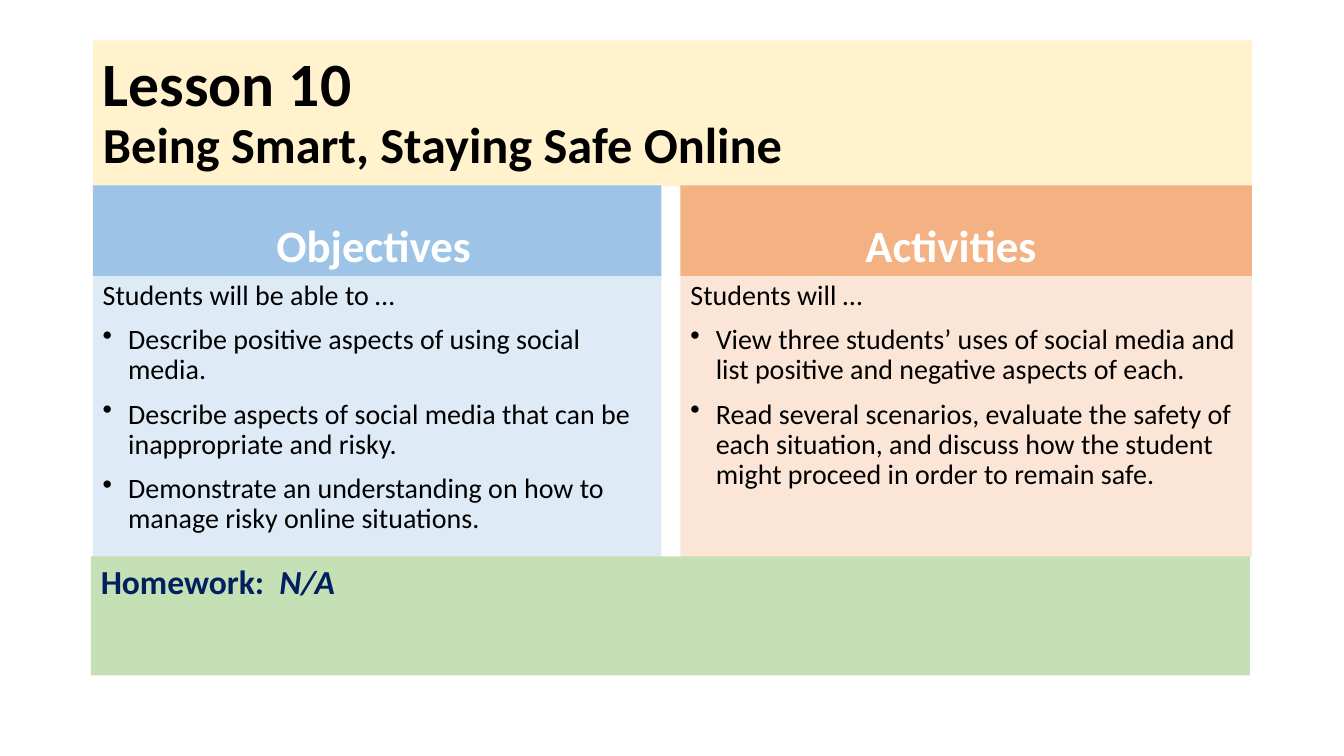
import pptx
import pptx.util
import pptx.dml.color
import pptx.enum.shapes
import pptx.enum.text
import pptx.oxml
import pptx.oxml.ns

Cm = pptx.util.Cm
Pt = pptx.util.Pt
ALIGN = pptx.enum.text.PP_ALIGN
ANCHOR = pptx.enum.text.MSO_ANCHOR

HUES = {
    "cream": "FFF2CC",
    "blue": "9DC3E6",
    "sky": "DEEBF7",
    "orange": "F4B183",
    "peach": "FBE5D6",
    "green": "C5E0B4",
    "navy": "002060",
    "black": "000000",
    "white": "FFFFFF",
}


def shade(fill, hue):
    fill.solid()
    fill.fore_color.rgb = pptx.dml.color.RGBColor.from_string(HUES[hue])


def style(run, size, hue, bold=False):
    run.font.name = "Calibri"
    run.font.size = Pt(size)
    run.font.bold = bold
    shade(run.font.fill, hue)


def place(shape, box):
    shape.left, shape.top, shape.width, shape.height = [Cm(n) for n in box]


def panel(slide, box, hue, anchor):
    kind = pptx.enum.shapes.MSO_SHAPE.RECTANGLE
    shape = slide.shapes.add_shape(kind, *[Cm(n) for n in box])
    shape.shadow.inherit = False
    shade(shape.fill, hue)
    shape.line.fill.background()
    frame = shape.text_frame
    frame.word_wrap = True
    frame.vertical_anchor = anchor
    return frame


def bullet(para):
    props = para._p.get_or_add_pPr()
    props.set("marL", str(Cm(0.64)))
    props.set("indent", str(-Cm(0.64)))
    mark = pptx.oxml.parse_xml(
        f'<a:buChar {pptx.oxml.ns.nsdecls("a")} char="•"/>')
    props.append(mark)


def banner(slide, box, lesson, topic):
    title = slide.shapes.title
    place(title, box)
    shade(title.fill, "cream")
    frame = title.text_frame
    frame.auto_size = pptx.enum.text.MSO_AUTO_SIZE.NONE
    frame.vertical_anchor = ANCHOR.MIDDLE
    para = frame.paragraphs[0]
    para.text = f"{lesson}\v{topic}"
    para.alignment = ALIGN.LEFT
    para.line_spacing = 0.9
    for run, size in zip(para.runs, (44, 36)):
        style(run, size, "black", True)


def column(slide, box, hues, head, lead, items):
    left, top, width, height = box
    cap = 2.29
    frame = panel(slide, (left, top, width, cap), hues[0], ANCHOR.BOTTOM)
    frame.text = f"{head}\t"
    frame.paragraphs[0].alignment = ALIGN.CENTER
    style(frame.paragraphs[0].runs[0], 32, "white", True)

    body = (left, top + cap, width, height - cap)
    frame = panel(slide, body, hues[1], ANCHOR.TOP)
    frame.text = "\n".join([lead, *items])
    for spot, para in enumerate(frame.paragraphs):
        para.alignment = ALIGN.LEFT
        para.line_spacing = 0.9
        para.space_before = Pt(10)
        style(para.runs[0], 20, "black")
        if spot:
            bullet(para)


def footer(slide, box, label, task):
    para = panel(slide, box, "green", ANCHOR.TOP).paragraphs[0]
    para.alignment = ALIGN.LEFT
    for text in (label, task):
        run = para.add_run()
        run.text = text
        style(run, 24, "navy", True)
    run.font.italic = True


def main():
    deck = pptx.Presentation()
    deck.slide_width = Cm(33.87)
    deck.slide_height = Cm(19.05)
    slide = deck.slides.add_slide(deck.slide_layouts.get_by_name("Title Only"))

    banner(slide, (2.34, 1.02, 29.21, 3.68),
           "Lesson 10", "Being Smart, Staying Safe Online")
    column(slide, (2.34, 4.67, 14.33, 9.38), ("blue", "sky"),
           "Objectives", "Students will be able to …", [
               "Describe positive aspects of using social media.",
               "Describe aspects of social media that can be "
               "inappropriate and risky.",
               "Demonstrate an understanding on how to manage "
               "risky online situations.",
           ])
    column(slide, (17.15, 4.67, 14.4, 9.38), ("orange", "peach"),
           "Activities", "Students will …", [
               "View three students’ uses of social media and list "
               "positive and negative aspects of each.",
               "Read several scenarios, evaluate the safety of each "
               "situation, and discuss how the student might proceed "
               "in order to remain safe.",
           ])
    footer(slide, (2.29, 14.02, 29.21, 3), "Homework:  ", "N/A")
    deck.save("out.pptx")


if __name__ == "__main__":
    main()
